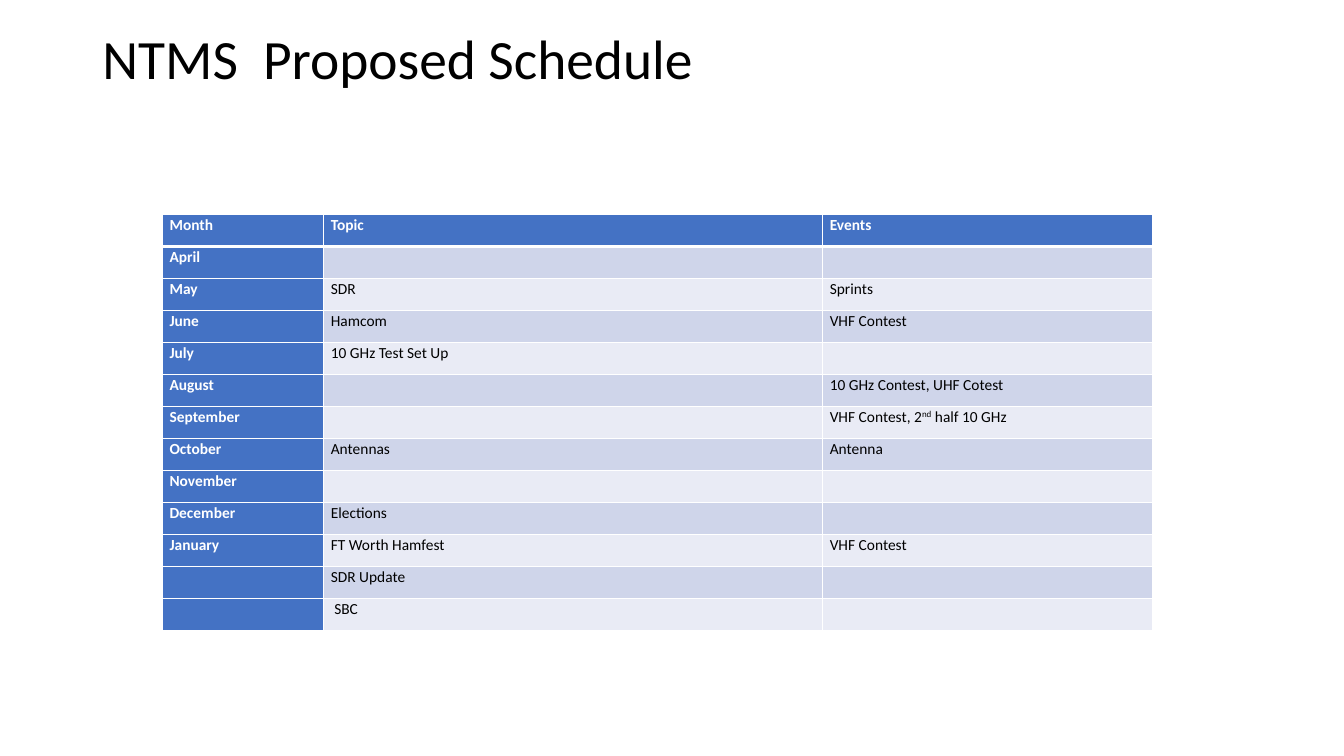
from pptx import Presentation
from pptx.dml.color import RGBColor as RGB
from pptx.enum.text import MSO_ANCHOR as Anchor, PP_ALIGN as Align
from pptx.oxml.ns import qn
from pptx.util import Pt
from lxml.etree import SubElement as Sub

BLACK = RGB(0, 0, 0)
WHITE = RGB(0xFF, 0xFF, 0xFF)
BLUE = RGB(0x44, 0x72, 0xC4)
BANDS = RGB(0xE9, 0xEB, 0xF5), RGB(0xCF, 0xD5, 0xEA)
FONT = "Calibri"

# A caret pair marks superscript text.
ROWS = [
    ("Month", "Topic", "Events"),
    ("April", "", ""),
    ("May", "SDR", "Sprints"),
    ("June", "Hamcom", "VHF Contest"),
    ("July", "10 GHz Test Set Up", ""),
    ("August", "", "10 GHz Contest, UHF Cotest"),
    ("September", "", "VHF Contest, 2^nd^ half 10 GHz"),
    ("October", "Antennas", "Antenna"),
    ("November", "", ""),
    ("December", "Elections", ""),
    ("January", "FT Worth Hamfest", "VHF Contest"),
    ("", "SDR Update", ""),
    ("", " SBC", ""),
]
WIDTHS = 115.2, 356.4, 236.2


def set_font(para, size, color, bold=False):
    font = para.font
    font.name, font.size, font.bold = FONT, Pt(size), bold
    font.color.rgb = color


def add_title(slide, left, top, width, height):
    title = slide.shapes.title
    title.left, title.top = Pt(left), Pt(top)
    title.width, title.height = Pt(width), Pt(height)
    frame = title.text_frame
    frame.word_wrap = True
    frame.vertical_anchor = Anchor.MIDDLE
    para = frame.paragraphs[0]
    para.add_run().text = "NTMS  Proposed Schedule"
    para.add_line_break()
    para.alignment = Align.LEFT
    para.line_spacing = 0.9
    set_font(para, 39.6, BLACK)


def add_edge(cell, side, width):
    line = Sub(cell._tc.get_or_add_tcPr(), qn(f"a:ln{side}"), w=str(Pt(width)))
    fill = Sub(line, qn("a:solidFill"))
    Sub(fill, qn("a:srgbClr"), val=str(WHITE))


def fill_cell(cell, text, row, col):
    head = row == 0 or col == 0
    cell.margin_left = cell.margin_right = Pt(5.4)
    cell.margin_top = cell.margin_bottom = 0
    for side in "LRTB":
        thick = (row, side) in ((0, "B"), (1, "T"))
        add_edge(cell, side, 3 if thick else 1)
    cell.fill.solid()
    cell.fill.fore_color.rgb = BLUE if head else BANDS[row % 2]
    para = cell.text_frame.paragraphs[0]
    set_font(para, 11, WHITE if head else BLACK, head)
    if not text:
        return
    para.line_spacing = 1.07
    for i, part in enumerate(text.split("^")):
        run = para.add_run()
        run.text = part
        if i % 2:
            run._r.get_or_add_rPr().set("baseline", "30000")


def add_plan(slide, left, top, height):
    """Add the table of months, topics and events."""
    frame = slide.shapes.add_table(len(ROWS), len(WIDTHS), Pt(left), Pt(top),
                                   Pt(sum(WIDTHS)), Pt(height))
    table = frame.table
    table.first_col = True
    for col, width in zip(table.columns, WIDTHS):
        col.width = Pt(width)
    for r, texts in enumerate(ROWS):
        table.rows[r].height = Pt(height / len(ROWS))
        for c, text in enumerate(texts):
            fill_cell(table.cell(r, c), text, r, c)


def main():
    deck = Presentation()
    deck.slide_width, deck.slide_height = Pt(960), Pt(540)
    slide = deck.slides.add_slide(deck.slide_layouts[5])
    add_title(slide, 66, 28.75, 828, 78.5)
    add_plan(slide, 115.7, 153.2, 297.2)
    deck.save("out.pptx")


if __name__ == "__main__":
    main()
